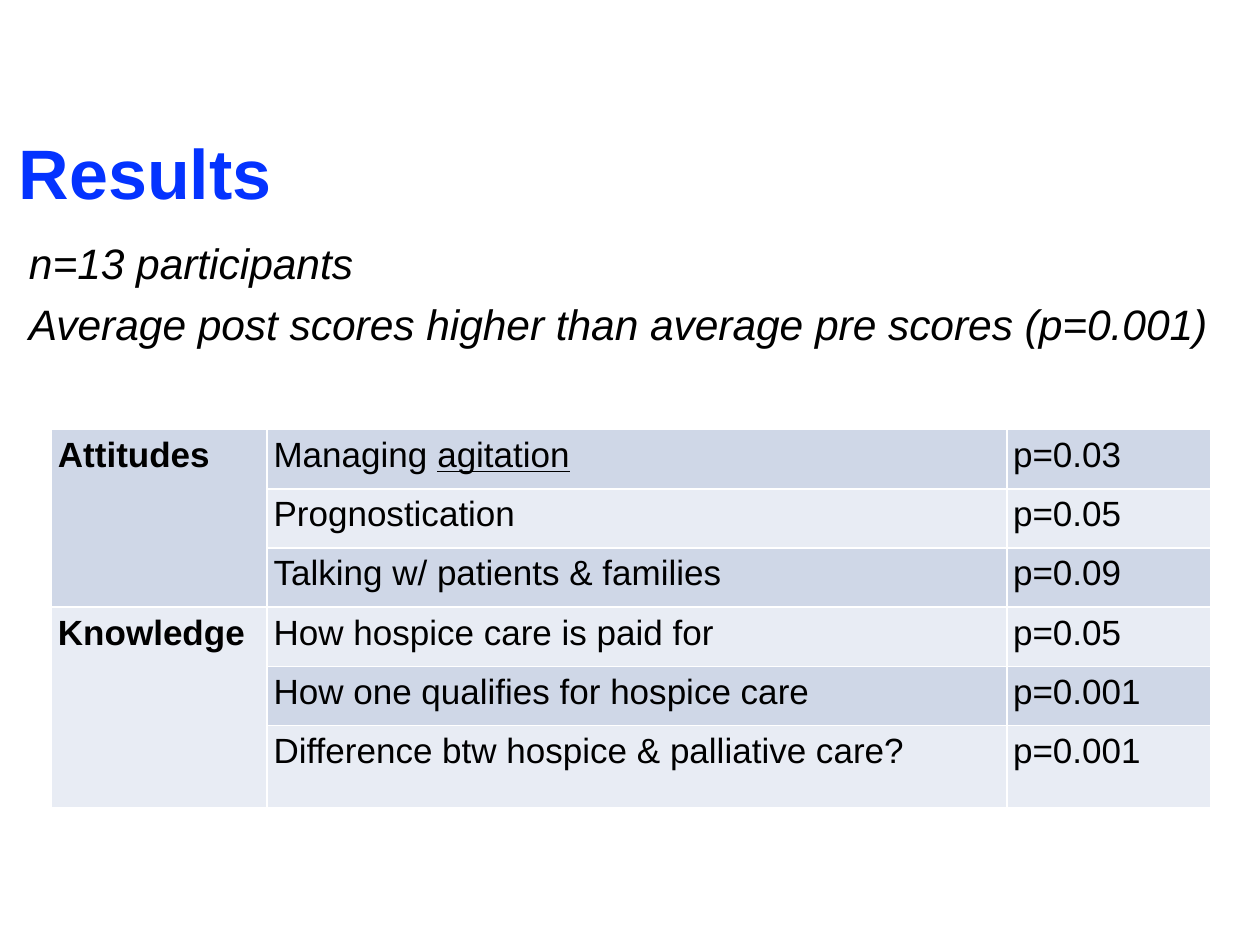
from lxml import etree
from pptx import Presentation
from pptx.dml.color import RGBColor
from pptx.enum.text import MSO_ANCHOR, PP_ALIGN
from pptx.oxml.ns import qn
from pptx.util import Inches, Pt

LEFT = PP_ALIGN.LEFT
TOP = MSO_ANCHOR.TOP
MIDDLE = MSO_ANCHOR.MIDDLE
BLUE = RGBColor(0x04, 0x33, 0xFF)
BLACK = RGBColor(0, 0, 0)
WHITE = RGBColor(0xFF, 0xFF, 0xFF)
BANDS = (RGBColor(0xCF, 0xD7, 0xE7), RGBColor(0xE8, 0xEC, 0xF4))
FONT = "Arial"
INSET = Inches(0.05)
TITLE_ONLY_AND_BODY = 1

FINDINGS = [
    ("Attitudes", [
        (["Managing ", "agitation"], "p=0.03"),
        (["Prognostication"], "p=0.05"),
        (["Talking w/ patients & families"], "p=0.09"),
    ]),
    ("Knowledge", [
        (["How hospice care is paid for"], "p=0.05"),
        (["How one qualifies for hospice care"], "p=0.001"),
        (["Difference btw hospice & palliative care?"], "p=0.001"),
    ]),
]
UNDERLINED = "agitation"
COLUMN_SHARES = (0.186, 0.638, 0.176)
ROW_HEIGHTS = (0.47,) * 5 + (0.65,)


def add_run(paragraph, text, size, color=BLACK, bold=False, italic=False, underline=False):
    run = paragraph.add_run()
    run.text = text
    font = run.font
    font.name, font.size = FONT, Pt(size)
    font.bold, font.italic, font.underline = bold, italic, underline
    font.color.rgb = color


def place_text(shape, box, anchor):
    shape.left, shape.top, shape.width, shape.height = map(Inches, box)
    frame = shape.text_frame
    frame.word_wrap = True
    frame.vertical_anchor = anchor
    frame.margin_left = frame.margin_right = INSET
    frame.margin_top = frame.margin_bottom = INSET
    return frame


def fill_title(slide, box):
    frame = place_text(slide.shapes.title, box, MIDDLE)
    paragraph = frame.paragraphs[0]
    paragraph.alignment = LEFT
    add_run(paragraph, "Results", 40, BLUE, bold=True)


def fill_summary(slide, box, lines):
    frame = place_text(slide.placeholders[1], box, TOP)
    for index, line in enumerate(lines):
        paragraph = frame.add_paragraph() if index else frame.paragraphs[0]
        properties = paragraph._p.get_or_add_pPr()
        properties.set("marL", "0")
        properties.set("indent", "0")
        etree.SubElement(properties, qn("a:buNone"))
        paragraph.space_before = Pt(6 if index else 0)
        paragraph.alignment = LEFT
        add_run(paragraph, line, 24.3, italic=True)


def style_cell(cell, color):
    cell.margin_left = cell.margin_right = INSET
    cell.margin_top = cell.margin_bottom = INSET
    properties = cell._tc.get_or_add_tcPr()
    for side in ("L", "R", "T", "B"):
        line = etree.SubElement(properties, qn(f"a:ln{side}"), w=str(Pt(1)))
        fill = etree.SubElement(line, qn("a:solidFill"))
        etree.SubElement(fill, qn("a:srgbClr"), val=str(WHITE))
    cell.fill.solid()
    cell.fill.fore_color.rgb = color


def write_cell(cell, texts, bold=False):
    for text in texts:
        add_run(cell.text_frame.paragraphs[0], text, 20, bold=bold, underline=text == UNDERLINED)


def add_findings(slide, left, top, width):
    frame = slide.shapes.add_table(
        len(ROW_HEIGHTS), len(COLUMN_SHARES),
        Inches(left), Inches(top), Inches(width), Inches(sum(ROW_HEIGHTS)))
    table = frame.table
    table.first_row = False
    for column, share in zip(table.columns, COLUMN_SHARES):
        column.width = Inches(width * share)
    for index, (row, height) in enumerate(zip(table.rows, ROW_HEIGHTS)):
        row.height = Inches(height)
        for cell in row.cells:
            style_cell(cell, BANDS[index % 2])
    start = 0
    for topic, entries in FINDINGS:
        end = start + len(entries)
        table.cell(start, 0).merge(table.cell(end - 1, 0))
        write_cell(table.cell(start, 0), [topic], bold=True)
        for row, (item, probability) in enumerate(entries, start):
            write_cell(table.cell(row, 1), item)
            write_cell(table.cell(row, 2), [probability])
        start = end


def main():
    presentation = Presentation()
    presentation.slide_width, presentation.slide_height = Inches(10), Inches(7.5)
    slide = presentation.slides.add_slide(presentation.slide_layouts[TITLE_ONLY_AND_BODY])
    fill_title(slide, (0.1, 0.98, 4.34, 0.77))
    fill_summary(slide, (0.18, 1.83, 9.53, 1.37), [
        "n=13 participants",
        "Average post scores higher than average pre scores (p=0.001)",
    ])
    add_findings(slide, 0.41, 3.41, 9.2)
    presentation.save("out.pptx")


if __name__ == "__main__":
    main()
